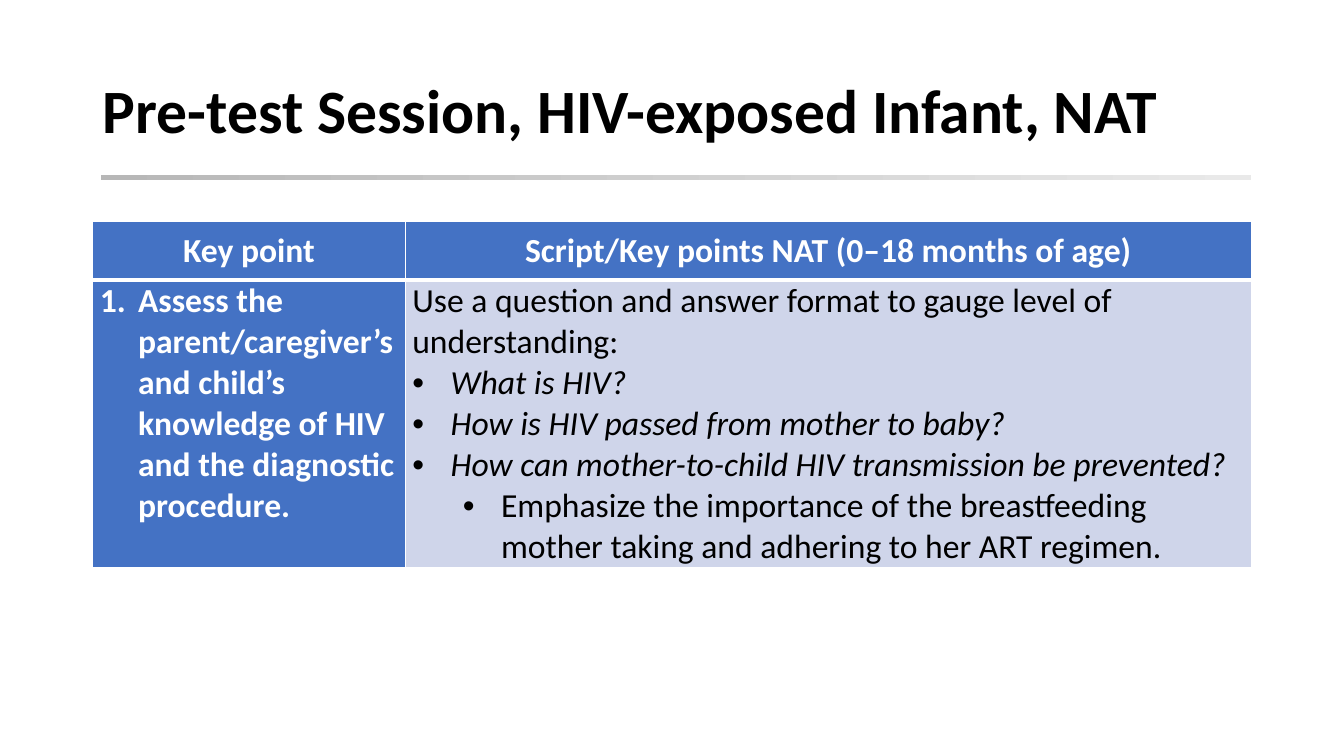
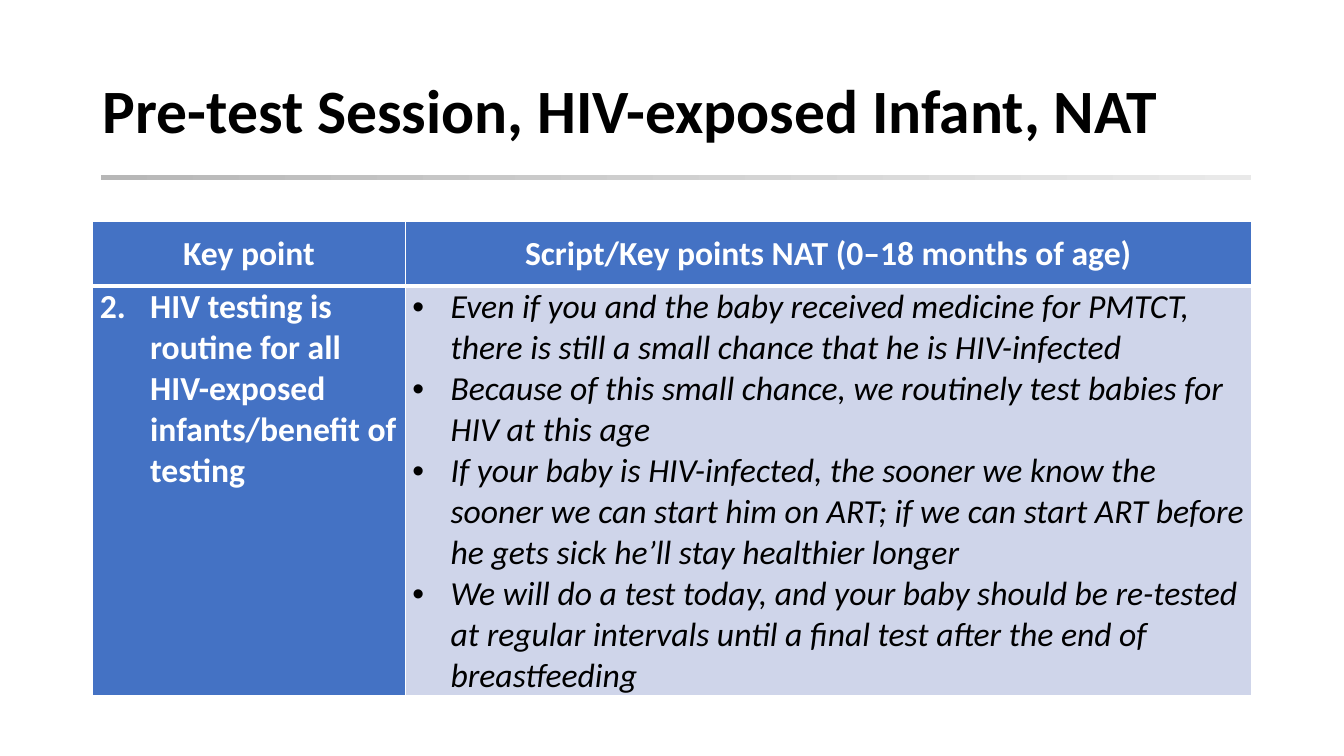
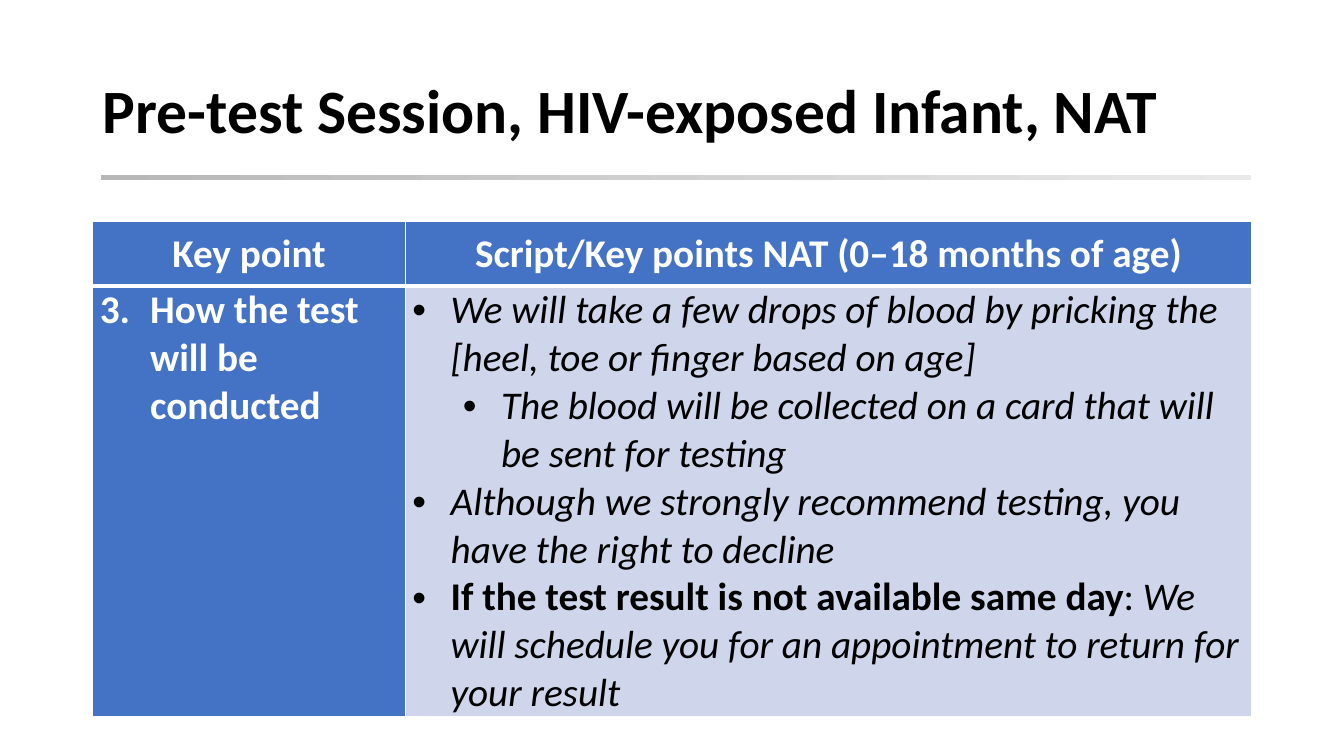
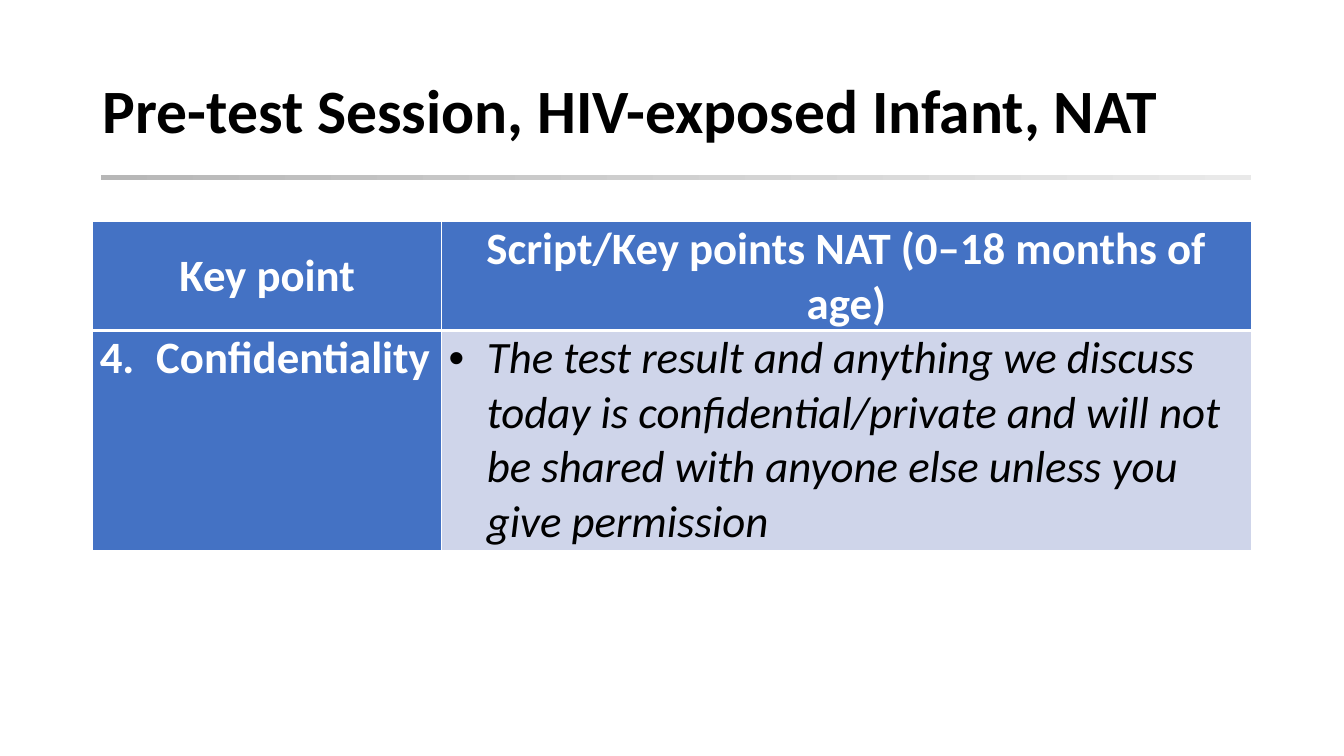
from lxml import etree
from pptx import Presentation
from pptx.dml.color import RGBColor
from pptx.enum.shapes import MSO_SHAPE
from pptx.enum.text import MSO_ANCHOR, PP_ALIGN
from pptx.oxml.ns import qn
from pptx.util import Inches, Pt

RECTANGLE = MSO_SHAPE.RECTANGLE
MIDDLE, TOP = MSO_ANCHOR.MIDDLE, MSO_ANCHOR.TOP
LEFT, CENTER = PP_ALIGN.LEFT, PP_ALIGN.CENTER

BLACK = RGBColor(0x00, 0x00, 0x00)
WHITE = RGBColor(0xFF, 0xFF, 0xFF)
BLUE = RGBColor(0x44, 0x72, 0xC4)
PALE_BLUE = RGBColor(0xCF, 0xD5, 0xEA)
RULE_START = RGBColor(0xB7, 0xB7, 0xB7)
RULE_END = RGBColor(0xE9, 0xE9, 0xE9)

FONT = "Calibri"
PAGE_WIDTH, PAGE_HEIGHT = 13.33, 7.5
MARGIN = 0.92
CONTENT_WIDTH = PAGE_WIDTH - 2 * MARGIN
RULE_LEFT = 1
TABLE_TOP = 2.2
CELL_INSET = 0.07
BULLET_INDENT = 0.38
LEVEL_STEP = 0.5

TITLE = "Pre-test Session, HIV-exposed Infant, NAT"
HEADINGS = ("Key point", "Script/Key points NAT (0–18 months of age)")

STRONG = {"bold": True, "italic": False}
PLAIN = {"bold": False, "italic": False}
SPOKEN = {"bold": False, "italic": True}


def bullet(*spans, level=0):
    """Describe a bulleted paragraph from (text, style) spans."""
    return {"spans": spans, "level": level, "mark": ("buChar", {"char": "•"}),
            "indent": BULLET_INDENT}


def spoken(text, level=0):
    """Describe a bullet that is said aloud."""
    return bullet((text, SPOKEN), level=level)


def key_point(number, text, indent):
    """Describe a numbered key point."""
    mark = ("buAutoNum", {"type": "arabicPeriod", "startAt": str(number)})
    return {"spans": [(text, STRONG)], "mark": mark, "indent": indent}


SESSIONS = [
    {"size": 24, "key_width": 3.1, "rows": (0.58, 2.85),
     "key": key_point(1, "Assess the parent/caregiver’s and child’s knowledge of HIV "
                         "and the diagnostic procedure.", 0.38),
     "script": [
         {"spans": [("Use a question and answer format to gauge level of "
                     "understanding:", PLAIN)]},
         spoken("What is HIV?"),
         spoken("How is HIV passed from mother to baby?"),
         spoken("How can mother-to-child HIV transmission be prevented?"),
         bullet(("Emphasize the importance of the breastfeeding mother taking and "
                 "adhering to her ART regimen.", PLAIN), level=1)]},
    {"size": 24, "key_width": 3.1, "rows": (0.64, 4.06),
     "key": key_point(2, "HIV testing is routine for all HIV-exposed "
                         "infants/benefit of testing", 0.5),
     "script": [
         spoken("Even if you and the baby received medicine for PMTCT, there is "
                "still a small chance that he is HIV-infected"),
         spoken("Because of this small chance, we routinely test babies for HIV "
                "at this age"),
         spoken("If your baby is HIV-infected, the sooner we know the sooner we can "
                "start him on ART; if we can start ART before he gets sick he’ll "
                "stay healthier longer"),
         spoken("We will do a test today, and your baby should be re-tested at "
                "regular intervals until a final test after the end of "
                "breastfeeding")]},
    {"size": 28, "key_width": 3.1, "rows": (0.64, 4.27),
     "key": key_point(3, "How the test will be conducted", 0.5),
     "script": [
         spoken("We will take a few drops of blood by pricking the [heel, toe or "
                "finger based on age]"),
         spoken("The blood will be collected on a card that will be sent for "
                "testing", level=1),
         spoken("Although we strongly recommend testing, you have the right to "
                "decline"),
         bullet(("If the test result is not available same day", STRONG),
                (":", PLAIN),
                (" We will schedule you for an appointment to return for your "
                 "result", SPOKEN))]},
    {"size": 32, "key_width": 3.46, "rows": (1.08, 2.18),
     "key": key_point(4, "Confidentiality", 0.56),
     "script": [
         spoken("The test result and anything we discuss today is "
                "confidential/private and will not be shared with anyone else "
                "unless you give permission")]},
]


def set_all(target, values):
    """Set attributes of an object from a dict."""
    for name, value in values.items():
        setattr(target, name, value)


def add_span(para, text, size, color, style):
    """Add a formatted run to a paragraph."""
    span = para.add_run()
    span.text = text
    set_all(span.font, {"name": FONT, "size": Pt(size), **style})
    span.font.color.rgb = color


def mark_paragraph(para, mark, indent, level):
    """Give a paragraph a hanging bullet or number."""
    para.level = level
    properties = para._p.get_or_add_pPr()
    properties.set("marL", str(Inches(indent + level * LEVEL_STEP)))
    properties.set("indent", str(-Inches(indent)))
    if mark[0] == "buChar":
        etree.SubElement(properties, qn("a:buFont"), typeface="Arial")
    etree.SubElement(properties, qn("a:" + mark[0]), mark[1])


def add_border(cell, side, points):
    """Draw a white border on one side of a cell."""
    properties = cell._tc.get_or_add_tcPr()
    line = etree.SubElement(properties, qn("a:ln" + side), w=str(Pt(points)))
    fill = etree.SubElement(line, qn("a:solidFill"))
    etree.SubElement(fill, qn("a:srgbClr"), val=str(WHITE))


def fill_cell(cell, paragraphs, size, color, background, borders,
              anchor=TOP, align=LEFT):
    """Fill a table cell with paragraphs, borders and a background."""
    for side, points in zip("LRTB", borders):
        add_border(cell, side, points)
    cell.fill.solid()
    cell.fill.fore_color.rgb = background
    set_all(cell, {"margin_left": Inches(CELL_INSET), "margin_top": 0,
                   "margin_right": Inches(CELL_INSET), "margin_bottom": 0,
                   "vertical_anchor": anchor})
    frame = cell.text_frame
    for index, item in enumerate(paragraphs):
        para = frame.add_paragraph() if index else frame.paragraphs[0]
        para.alignment = align
        if "mark" in item:
            mark_paragraph(para, item["mark"], item["indent"], item.get("level", 0))
        for text, style in item["spans"]:
            add_span(para, text, size, color, style)


def add_title(page):
    """Add the slide title and the fading rule below it."""
    rule = page.shapes.add_shape(RECTANGLE, Inches(RULE_LEFT), Inches(1.74),
                                 Inches(PAGE_WIDTH - MARGIN - RULE_LEFT), Inches(0.05))
    rule.shadow.inherit = False
    rule.line.fill.background()
    rule.fill.gradient()
    rule.fill.gradient_angle = 0
    for stop, color in zip(rule.fill.gradient_stops, (RULE_START, RULE_END)):
        stop.color.rgb = color
    box = page.shapes.add_textbox(Inches(MARGIN), Inches(0.4),
                                  Inches(CONTENT_WIDTH), Inches(1.45))
    set_all(box.text_frame, {"word_wrap": True, "vertical_anchor": MIDDLE})
    para = box.text_frame.paragraphs[0]
    para.line_spacing = 0.9
    add_span(para, TITLE, 44, BLACK, STRONG)


def add_session_table(page, session):
    """Add the table that pairs a key point with its script."""
    rows, size = session["rows"], session["size"]
    table = page.shapes.add_table(2, 2, Inches(MARGIN), Inches(TABLE_TOP),
                                  Inches(CONTENT_WIDTH), Inches(sum(rows))).table
    table.horz_banding = False
    for row, height in zip(table.rows, rows):
        row.height = Inches(height)
    widths = (session["key_width"], CONTENT_WIDTH - session["key_width"])
    for column, width in zip(table.columns, widths):
        column.width = Inches(width)
    for index, heading in enumerate(HEADINGS):
        fill_cell(table.cell(0, index), [{"spans": [(heading, STRONG)]}], size,
                  WHITE, BLUE, (1, 1, 1, 3), MIDDLE, CENTER)
    body_borders = (1, 1, 3, 1)
    fill_cell(table.cell(1, 0), [session["key"]], size, WHITE, BLUE, body_borders)
    fill_cell(table.cell(1, 1), session["script"], size, BLACK, PALE_BLUE, body_borders)


def main():
    """Build the deck and save it."""
    deck = Presentation()
    deck.slide_width, deck.slide_height = Inches(PAGE_WIDTH), Inches(PAGE_HEIGHT)
    for session in SESSIONS:
        page = deck.slides.add_slide(deck.slide_layouts[6])
        add_title(page)
        add_session_table(page, session)
    deck.save("out.pptx")


if __name__ == "__main__":
    main()
